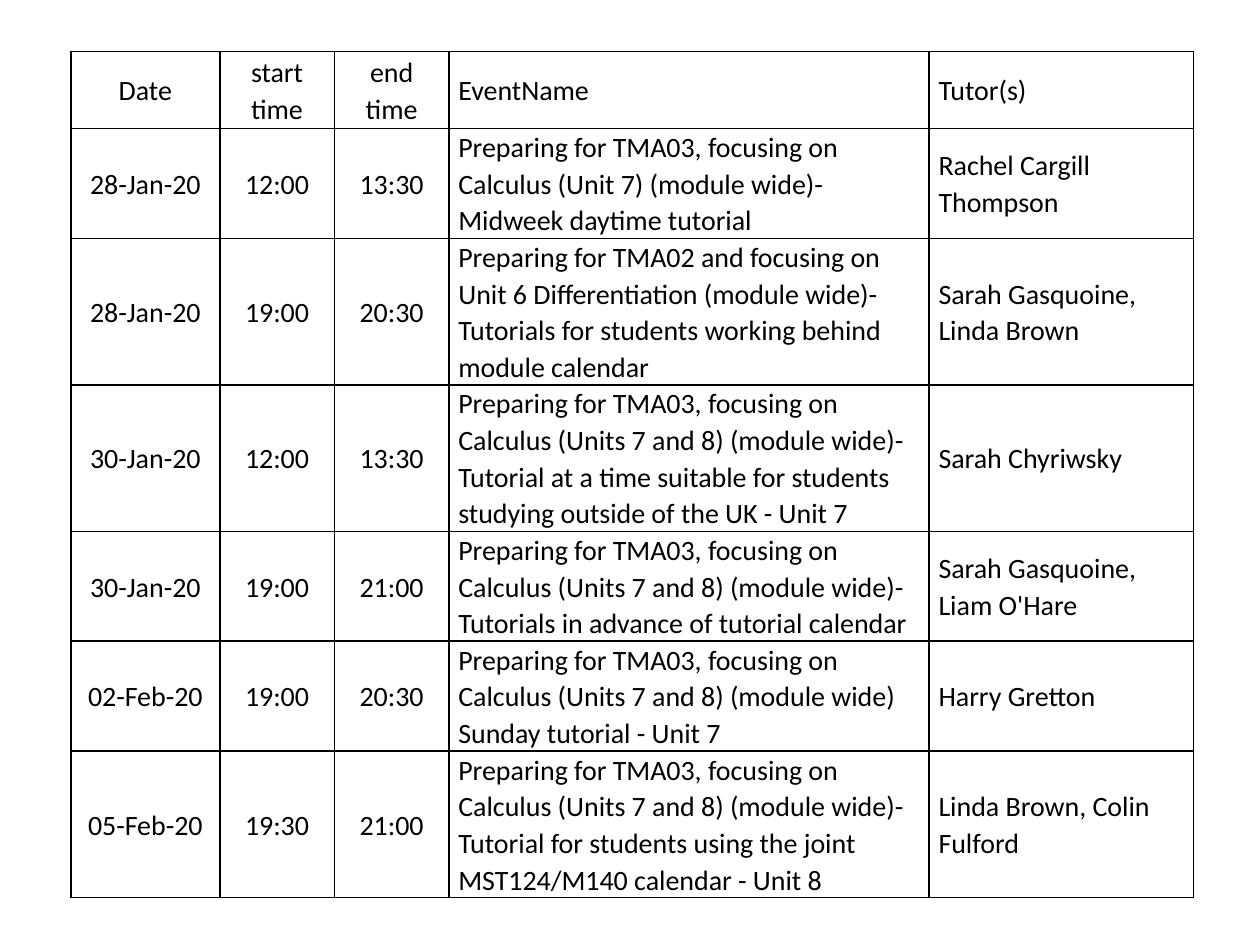
from lxml import etree
from pptx import Presentation
from pptx import util as u
from pptx.dml.color import RGBColor
from pptx.enum import text
from pptx.oxml.ns import qn

COLOURS = {"ink": "000000", "paper": "FFFFFF"}
FONT = "Calibri"

COLUMN_WIDTHS = [3, 2.31, 2.31, 9.68, 5.33]
HEADER_HEIGHT, THREE_LINES, FOUR_LINES = 1.55, 2.17, 2.9
ROW_HEIGHTS = [HEADER_HEIGHT, THREE_LINES, FOUR_LINES, FOUR_LINES,
               THREE_LINES, THREE_LINES, FOUR_LINES]
CENTRED_COLUMNS = 3

HEADER = ("Date", "start time", "end time", "EventName", "Tutor(s)")
UNITS = "Preparing for TMA03, focusing on Calculus (Units 7 and 8) (module wide)"
TUTORIALS = [
    ("28-Jan-20", "12:00", "13:30",
     "Preparing for TMA03, focusing on Calculus (Unit 7) (module wide)- "
     "Midweek daytime tutorial",
     "Rachel Cargill Thompson"),
    ("28-Jan-20", "19:00", "20:30",
     "Preparing for TMA02 and focusing on Unit 6 Differentiation (module wide)- "
     "Tutorials for students working behind module calendar",
     "Sarah Gasquoine, Linda Brown"),
    ("30-Jan-20", "12:00", "13:30",
     UNITS + "- Tutorial at a time suitable for students studying outside "
     "of the UK - Unit 7",
     "Sarah Chyriwsky"),
    ("30-Jan-20", "19:00", "21:00",
     UNITS + "- Tutorials in advance of tutorial calendar",
     "Sarah Gasquoine, Liam O'Hare"),
    ("02-Feb-20", "19:00", "20:30",
     UNITS + " Sunday tutorial - Unit 7",
     "Harry Gretton"),
    ("05-Feb-20", "19:30", "21:00",
     UNITS + "- Tutorial for students using the joint MST124/M140 calendar - Unit 8",
     "Linda Brown, Colin Fulford"),
]


def colour(name):
    return RGBColor.from_string(COLOURS[name])


def write_text(frame, words, *, size=16, ink="ink", align=text.PP_ALIGN.LEFT,
               line_spacing=1.07):
    para = frame.paragraphs[0]
    para.alignment = align
    para.line_spacing = line_spacing
    span = para.add_run()
    span.text = words
    span.font.name = FONT
    span.font.size = u.Pt(size)
    span.font.bold = False
    span.font.color.rgb = colour(ink)


def add_borders(cell, ink="ink", width=1):
    """Rule all four sides; the lines must precede the fill in the cell's XML."""
    properties = cell._tc.get_or_add_tcPr()
    for position, side in enumerate(("a:lnL", "a:lnR", "a:lnT", "a:lnB")):
        line = etree.Element(qn(side), w=str(u.Pt(width)))
        fill = etree.SubElement(line, qn("a:solidFill"))
        etree.SubElement(fill, qn("a:srgbClr"), val=COLOURS[ink])
        properties.insert(position, line)


def format_cell(cell):
    cell.margin_left = cell.margin_right = u.Cm(0.19)
    cell.margin_top = cell.margin_bottom = 0
    cell.vertical_anchor = text.MSO_ANCHOR.MIDDLE
    cell.fill.solid()
    cell.fill.fore_color.rgb = colour("paper")
    add_borders(cell)


def add_timetable(slide, rows, *, left, top):
    frame = slide.shapes.add_table(
        len(rows), len(COLUMN_WIDTHS), u.Cm(left), u.Cm(top),
        u.Cm(sum(COLUMN_WIDTHS)), u.Cm(sum(ROW_HEIGHTS)))
    table = frame.table
    table.first_row = table.horz_banding = False
    for column, width in zip(table.columns, COLUMN_WIDTHS):
        column.width = u.Cm(width)
    for row, height, entries in zip(table.rows, ROW_HEIGHTS, rows):
        row.height = u.Cm(height)
        for index, (cell, words) in enumerate(zip(row.cells, entries)):
            centred = index < CENTRED_COLUMNS
            format_cell(cell)
            write_text(cell.text_frame, words,
                       align=text.PP_ALIGN.CENTER if centred else text.PP_ALIGN.LEFT)


def main():
    deck = Presentation()
    deck.slide_width, deck.slide_height = u.Cm(25.4), u.Cm(19.05)
    blank_layout = deck.slide_layouts[6]
    slide = deck.slides.add_slide(blank_layout)
    add_timetable(slide, [HEADER, *TUTORIALS], left=1.43, top=1.04)
    deck.save("out.pptx")


if __name__ == "__main__":
    main()
